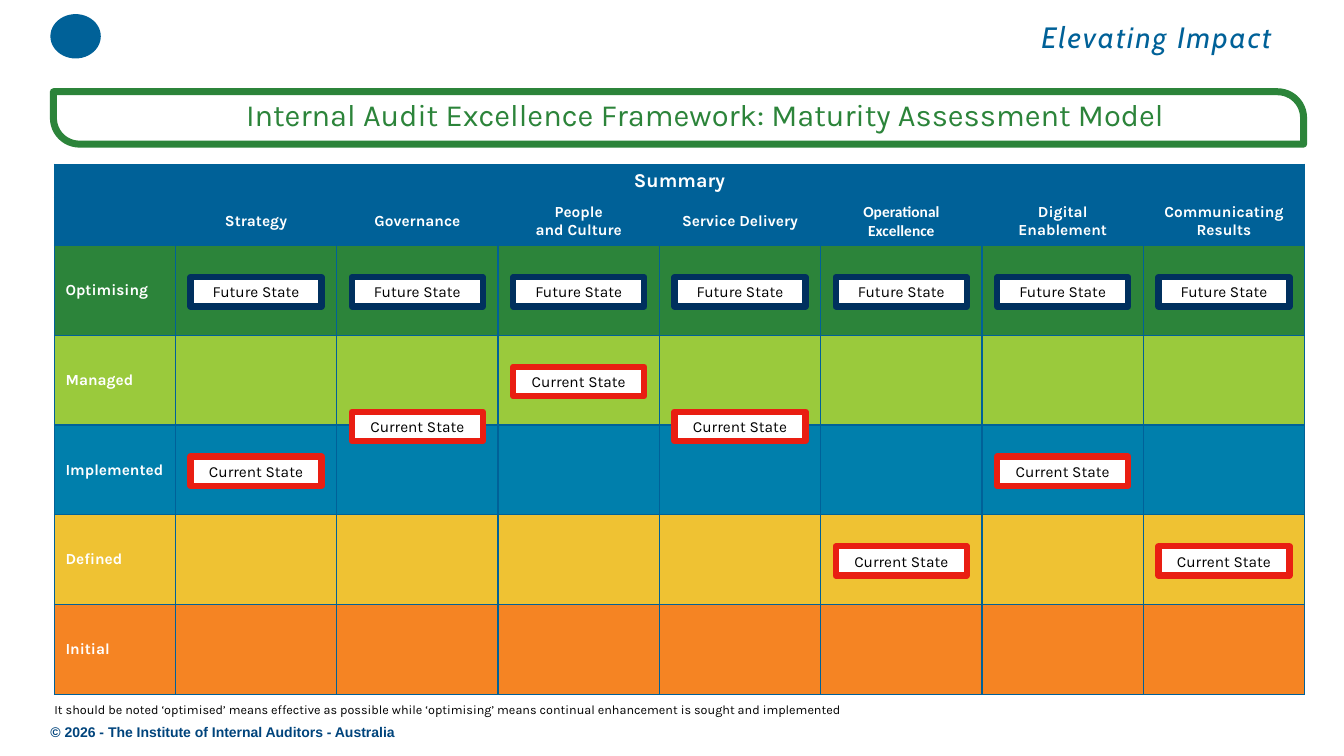
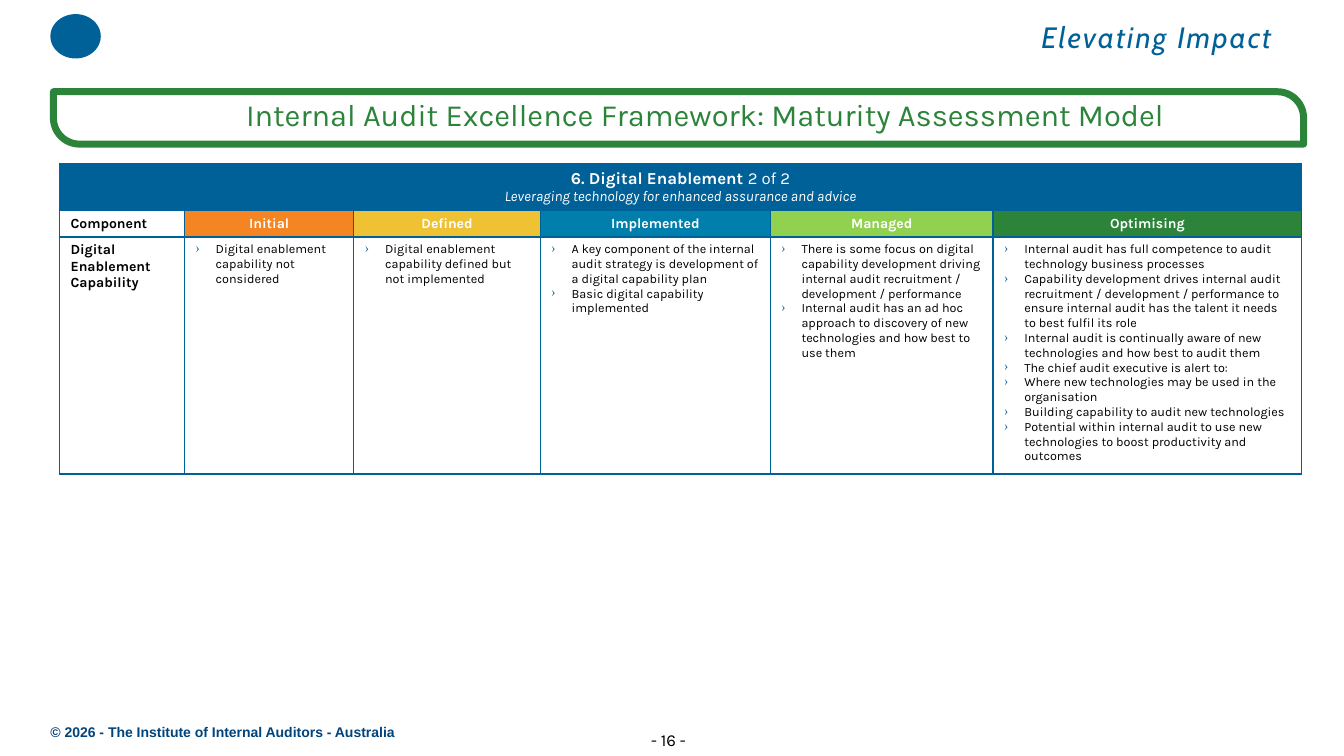
from dataclasses import dataclass, replace

from lxml import etree
from pptx import Presentation
from pptx.dml.color import RGBColor
from pptx.enum import shapes, text
from pptx.oxml.ns import qn
from pptx.util import Inches, Pt


@dataclass(frozen=True)
class Box:
    left: float
    top: float
    width: float
    height: float

    def inches(self):
        return [Inches(n) for n in (self.left, self.top, self.width, self.height)]


@dataclass(frozen=True)
class Style:
    size: float
    color: str
    font: str = "Karla"
    bold: bool = False
    italic: bool = False
    spacing: int = 0  # hundredths of a point


class Theme:
    blue, green, white, black = "006198", "2C843A", "FFFFFF", "000000"
    future, current = "00305E", "E91E12"
    levels = {
        "Optimising": green,
        "Managed": "9ACA3C",
        "Implemented": "007FAC",
        "Defined": "EFC233",
        "Initial": "F58423",
    }
    managed_heading = "92D050"

    tagline = Style(21, blue, "Cabin", italic=True, spacing=155)
    title = Style(22, green)
    copyright = Style(10, "00447C", "Arial", bold=True)
    page = Style(12, black)
    note = Style(9, black)
    marker = Style(11, black)
    summary = Style(14, white, bold=True)
    area = Style(11, white, bold=True)
    topic = Style(12, white, bold=True)
    topic_count = Style(12, white)
    subtitle = Style(10.5, white, italic=True)
    level = Style(10, white, bold=True)
    component = Style(10, black, bold=True)
    body = Style(9, black)


CENTER, LEFT = text.PP_ALIGN.CENTER, text.PP_ALIGN.LEFT
TOP, MIDDLE = text.MSO_ANCHOR.TOP, text.MSO_ANCHOR.MIDDLE

TITLE = "Internal Audit Excellence Framework: Maturity Assessment Model"
NOTE = ("It should be noted ‘optimised’ means effective as possible while "
        "‘optimising’ means continual enhancement is sought and implemented")

# Assessed area: heading lines, font, rows below Optimising at which it stands now
AREAS = [
    (["Strategy"], "Karla", 2),
    (["Governance"], "Karla", 1.5),
    (["People", "and Culture"], "Karla", 1),
    (["Service Delivery"], "Karla", 1.5),
    (["Operational Excellence"], "Calibri", 3),
    (["Digital Enablement"], "Karla", 2),
    (["Communicating Results"], "Karla", 3),
]

CAPABILITY = {
    "Initial": ["Digital enablement capability not considered"],
    "Defined": ["Digital enablement capability defined but not implemented"],
    "Implemented": [
        "A key component of the internal audit strategy is development of a digital capability plan",
        "Basic digital capability implemented",
    ],
    "Managed": [
        "There is some focus on digital capability development driving internal audit "
        "recruitment / development / performance",
        "Internal audit has an ad hoc approach to discovery of new technologies and how best to use them",
    ],
    "Optimising": [
        "Internal audit has full competence to audit technology business processes",
        "Capability development drives internal audit recruitment / development / performance "
        "to ensure internal audit has the talent it needs to best fulfil its role",
        "Internal audit is continually aware of new technologies and how best to audit them",
        "The chief audit executive is alert to:",
        "Where new technologies may be used in the organisation",
        "Building capability to audit new technologies",
        "Potential within internal audit to use new technologies to boost productivity and outcomes",
    ],
}


def rgb(color):
    return RGBColor.from_string(color)


def add_run(paragraph, words, style):
    run = paragraph.add_run()
    run.text = words
    font = run.font
    font.name, font.size = style.font, Pt(style.size)
    font.bold, font.italic = style.bold, style.italic
    font.color.rgb = rgb(style.color)
    if style.spacing:
        font._element.set("spc", str(style.spacing))


def add_bullet(paragraph):
    props = paragraph._p.get_or_add_pPr()
    props.set("marL", str(Inches(0.2)))
    props.set("indent", str(Inches(-0.2)))
    color = etree.SubElement(props, qn("a:buClr"))
    etree.SubElement(color, qn("a:srgbClr"), val=Theme.blue)
    etree.SubElement(props, qn("a:buChar"), char="›")


def write(frame, paragraphs, align=LEFT, bulleted=False):
    """Fill a text frame; each paragraph is a list of (words, style) runs."""
    for index, runs in enumerate(paragraphs):
        paragraph = frame.add_paragraph() if index else frame.paragraphs[0]
        paragraph.alignment = align
        if bulleted:
            add_bullet(paragraph)
        for words, style in runs:
            add_run(paragraph, words, style)


def set_frame(frame, anchor=TOP, inset=(0, 0.01)):
    frame.word_wrap = True
    frame.auto_size = text.MSO_AUTO_SIZE.NONE
    frame.vertical_anchor = anchor
    frame.margin_left = frame.margin_right = Inches(inset[0])
    frame.margin_top = frame.margin_bottom = Inches(inset[1])


def add_label(slide, box, words, style, align=LEFT, inset=(0, 0.01)):
    frame = slide.shapes.add_textbox(*box.inches()).text_frame
    set_frame(frame, inset=inset)
    write(frame, [[(words, style)]], align)


def add_panel(slide, preset, box, fill=None, line=None, weight=0):
    panel = slide.shapes.add_shape(preset, *box.inches())
    panel.shadow.inherit = False
    if fill:
        panel.fill.solid()
        panel.fill.fore_color.rgb = rgb(fill)
    else:
        panel.fill.background()
    if line:
        panel.line.color.rgb = rgb(line)
        panel.line.width = Pt(weight)
    else:
        panel.line.fill.background()
    return panel


def add_title(slide, box):
    """Place the title inside its frame, which has two rounded corners."""
    band = add_panel(slide, shapes.MSO_SHAPE.ROUND_2_DIAG_RECTANGLE, box,
                     line=Theme.green, weight=5)
    band.adjustments[0], band.adjustments[1] = 0, 0.5
    title = slide.shapes.title
    title.left, title.top, title.width, title.height = Box(
        box.left + 1.91, box.top + 0.03, 9.86, 0.39).inches()
    set_frame(title.text_frame)
    write(title.text_frame, [[(TITLE, Theme.title)]])


def add_framed_slide(deck):
    slide = deck.slides.add_slide(deck.slide_layouts.get_by_name("Title Only"))
    add_panel(slide, shapes.MSO_SHAPE.OVAL, Box(0.5, 0.14, 0.5, 0.44), Theme.blue)
    add_label(slide, Box(10.33, 0.18, 2.6, 0.38), "Elevating Impact", Theme.tagline)
    add_title(slide, Box(0.53, 0.91, 12.4, 0.52))
    add_label(slide, Box(0.5, 7.17, 7.52, 0.17),
              "© 2026 - The Institute of Internal Auditors - Australia", Theme.copyright)
    return slide


def add_grid(slide, box, widths, heights):
    """Add a plain table whose first row is one merged heading."""
    table = slide.shapes.add_table(len(heights), len(widths), *box.inches()).table
    table.first_row = table.horz_banding = False
    for column, width in zip(table.columns, widths):
        column.width = Inches(width)
    for row, height in zip(table.rows, heights):
        row.height = Inches(height)
    for cell in table.iter_cells():
        add_borders(cell)
    table.cell(0, 0).merge(table.cell(0, len(widths) - 1))
    return table


def add_borders(cell):
    props = cell._tc.get_or_add_tcPr()
    for side in ("a:lnL", "a:lnR", "a:lnT", "a:lnB"):
        line = etree.SubElement(props, qn(side), w=str(Pt(1)))
        fill = etree.SubElement(line, qn("a:solidFill"))
        etree.SubElement(fill, qn("a:srgbClr"), val=Theme.blue)


def fill_cell(cell, fill, paragraphs=(), align=LEFT, anchor=MIDDLE, bulleted=False):
    cell.fill.solid()
    cell.fill.fore_color.rgb = rgb(fill)
    cell.vertical_anchor = anchor
    if align == LEFT:
        cell.margin_left = cell.margin_right = Inches(0.11)
    write(cell.text_frame, paragraphs, align, bulleted)


def add_marker(slide, box, words, outline):
    marker = add_panel(slide, shapes.MSO_SHAPE.RECTANGLE, box, Theme.white, outline, 4.5)
    set_frame(marker.text_frame, MIDDLE, inset=(0.1, 0.05))
    write(marker.text_frame, [[(words, Theme.marker)]], CENTER)


def add_summary(slide, box):
    """Maturity levels by area, with markers for the current and future state."""
    label_width, area_width = 1.2, 1.6
    heading_heights, level_height = [0.33, 0.46], 0.89
    table = add_grid(slide, box, [label_width] + [area_width] * len(AREAS),
                     heading_heights + [level_height] * len(Theme.levels))
    fill_cell(table.cell(0, 0), Theme.blue, [[("Summary", Theme.summary)]], CENTER)
    fill_cell(table.cell(1, 0), Theme.blue)
    for column, (lines, font, _) in enumerate(AREAS, 1):
        style = replace(Theme.area, font=font)
        fill_cell(table.cell(1, column), Theme.blue,
                  [[(line, style)] for line in lines], CENTER)
    for row, (level, color) in enumerate(Theme.levels.items(), 2):
        fill_cell(table.cell(row, 0), color, [[(level, Theme.area)]])
        for column in range(1, len(AREAS) + 1):
            fill_cell(table.cell(row, column), color)

    first_top = box.top + sum(heading_heights) + 0.33
    for index, (_, _, steps) in enumerate(AREAS):
        left = box.left + label_width + area_width * index + 0.15
        add_marker(slide, Box(left, first_top, 1.3, 0.29), "Future State", Theme.future)
        add_marker(slide, Box(left, first_top + level_height * steps, 1.3, 0.29),
                   "Current State", Theme.current)


def add_capability(slide, box):
    table = add_grid(slide, box, [1.24, 1.68, 1.85, 2.28, 2.21, 3.06], [0.47, 0.26, 2.35])
    fill_cell(table.cell(0, 0), Theme.blue, [
        [("6. Digital Enablement ", Theme.topic), ("2 of 2", Theme.topic_count)],
        [("Leveraging technology for enhanced assurance and advice", Theme.subtitle)],
    ], CENTER)
    fill_cell(table.cell(1, 0), Theme.white, [[("Component", Theme.component)]])
    fill_cell(table.cell(2, 0), Theme.white,
              [[("Digital Enablement Capability", Theme.component)]], anchor=TOP)
    headings = {**Theme.levels, "Managed": Theme.managed_heading}
    for column, (level, points) in enumerate(CAPABILITY.items(), 1):
        fill_cell(table.cell(1, column), headings[level], [[(level, Theme.level)]], CENTER)
        fill_cell(table.cell(2, column), Theme.white,
                  [[(point, Theme.body)] for point in points], anchor=TOP, bulleted=True)


def main():
    deck = Presentation()
    deck.slide_width, deck.slide_height = Inches(13.33), Inches(7.5)

    summary = add_framed_slide(deck)
    add_summary(summary, Box(0.54, 1.63, 12.4, 5.24))
    add_label(summary, Box(0.54, 6.91, 11.7, 0.25), NOTE, Theme.note, inset=(0, 0.05))

    capability = add_framed_slide(deck)
    add_capability(capability, Box(0.59, 1.62, 12.32, 3.08))
    add_label(capability, Box(6.26, 7.19, 0.74, 0.31), "- 16 -", Theme.page,
              CENTER, inset=(0.1, 0.05))

    deck.save("out.pptx")


if __name__ == "__main__":
    main()
